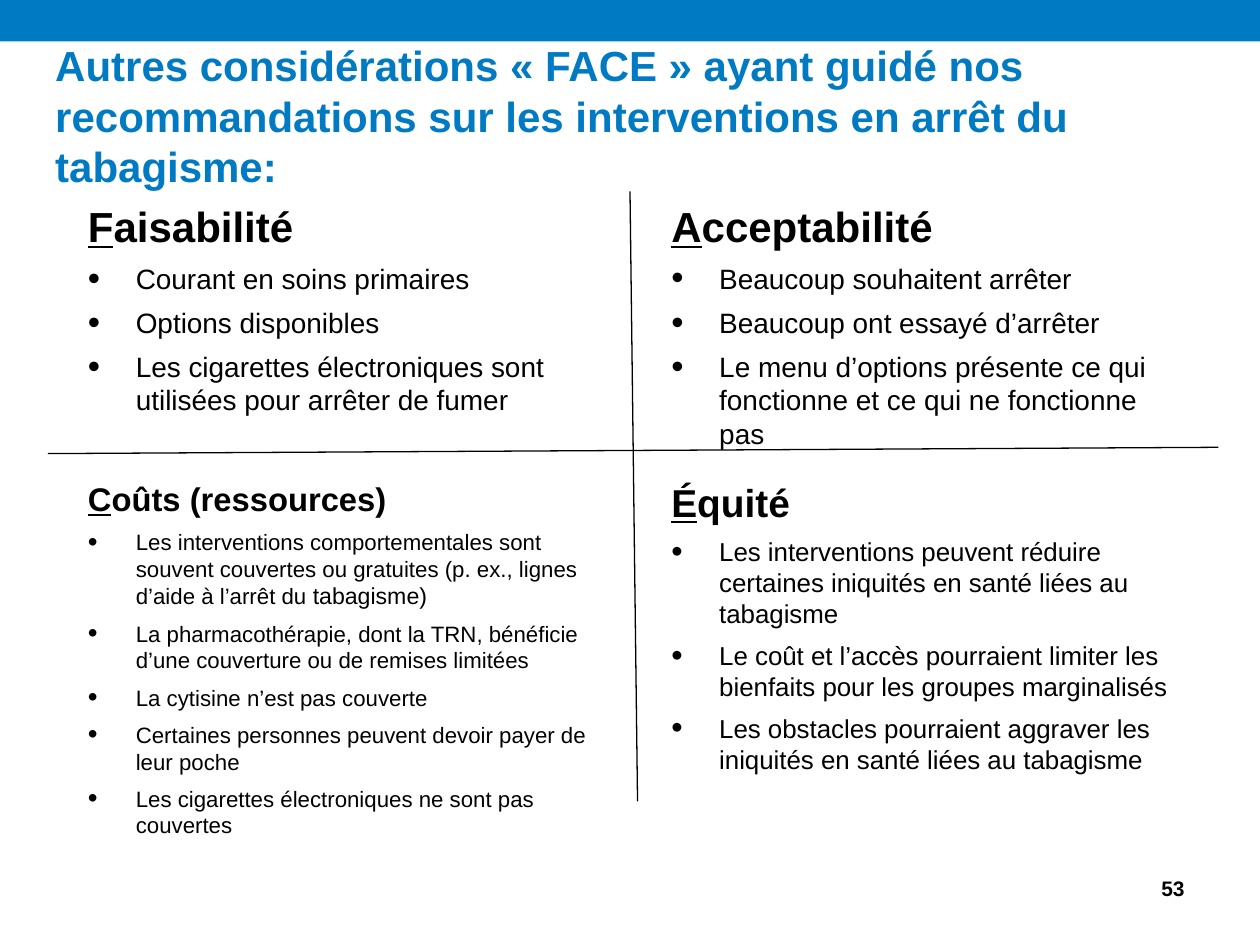
from lxml import etree
from pptx import Presentation
from pptx.dml.color import RGBColor
from pptx.enum.shapes import MSO_CONNECTOR, MSO_SHAPE
from pptx.enum.text import MSO_ANCHOR, PP_ALIGN
from pptx.oxml.ns import qn
from pptx.util import Inches, Pt

BLUE = RGBColor(0x00, 0x7B, 0xC3)
BLACK = RGBColor(0, 0, 0)
FONT = "Arial"
STRAIGHT = MSO_CONNECTOR.STRAIGHT
RECTANGLE = MSO_SHAPE.RECTANGLE
MIDDLE = MSO_ANCHOR.MIDDLE
LEFT, RIGHT = PP_ALIGN.LEFT, PP_ALIGN.RIGHT

TITLE = ("Autres considérations « FACE » ayant guidé nos recommandations "
         "sur les interventions en arrêt du tabagisme:")
PAGE_NUMBER = "53"

# Each bullet is a list of (text, size) runs or a plain string in the body size.
QUADRANTS = [
    {"heading": "Faisabilité", "box": (0.6, 1.54, 3.84, 1.89),
     "sizes": (24, 16), "bullets": [
         "Courant en soins primaires",
         "Options disponibles",
         "Les cigarettes électroniques sont utilisées pour arrêter de fumer"]},
    {"heading": "Acceptabilité", "box": (5.23, 1.54, 4.12, 2.1),
     "sizes": (24, 16), "bullets": [
         "Beaucoup souhaitent arrêter",
         "Beaucoup ont essayé d’arrêter",
         "Le menu d’options présente ce qui fonctionne et ce qui ne fonctionne pas"]},
    {"heading": "Coûts (ressources)", "box": (0.6, 3.75, 4.24, 3.03),
     "sizes": (18.7, 12.7), "bullets": [
         [("Les interventions comportementales sont souvent couvertes ou gratuites "
           "(p. ex., lignes d’aide à l’arrêt du ", 12.7), ("tabagisme)", 13.2)],
         "La pharmacothérapie, dont la TRN, bénéficie d’une couverture "
         "ou de remises limitées",
         "La cytisine n’est pas couverte",
         "Certaines personnes peuvent devoir payer de leur poche",
         "Les cigarettes électroniques ne sont pas couvertes"]},
    {"heading": "Équité", "box": (5.23, 3.75, 4.26, 2.72),
     "sizes": (22.2, 14.8), "bullets": [
         "Les interventions peuvent réduire certaines iniquités en santé liées au tabagisme",
         "Le coût et l’accès pourraient limiter les bienfaits pour les groupes marginalisés",
         "Les obstacles pourraient aggraver les iniquités en santé liées au tabagisme"]},
]
DIVIDERS = [(5, 1.52, 5.06, 6.36), (0.38, 3.6, 9.67, 3.55)]
BULLET_INDENT = Inches(0.38)


def add_frame(slide, box):
    frame = slide.shapes.add_textbox(*map(Inches, box)).text_frame
    frame.word_wrap = True
    return frame


def add_run(paragraph, text, size, color=BLACK, bold=False, underline=False):
    run = paragraph.add_run()
    run.text = text
    font = run.font
    font.name, font.size, font.bold, font.underline = FONT, Pt(size), bold, underline
    font.color.rgb = color


def add_label(slide, box, text, size, color, align):
    """Add one bold, vertically centred paragraph."""
    frame = add_frame(slide, box)
    frame.vertical_anchor = MIDDLE
    paragraph = frame.paragraphs[0]
    paragraph.alignment = align
    add_run(paragraph, text, size, color, bold=True)


def set_bullet(paragraph):
    properties = paragraph._p.get_or_add_pPr()
    properties.set("marL", str(BULLET_INDENT))
    properties.set("indent", str(-BULLET_INDENT))
    etree.SubElement(properties, qn("a:buSzPct"), val="125000")
    etree.SubElement(properties, qn("a:buFont"), typeface=FONT)
    etree.SubElement(properties, qn("a:buChar"), char="•")


def add_quadrant(slide, heading, box, sizes, bullets):
    heading_size, body_size = sizes
    frame = add_frame(slide, box)
    paragraph = frame.paragraphs[0]
    paragraph.space_after = Pt(6)
    add_run(paragraph, heading[0], heading_size, bold=True, underline=True)
    add_run(paragraph, heading[1:], heading_size, bold=True)
    for bullet in bullets:
        paragraph = frame.add_paragraph()
        paragraph.space_after = Pt(6)
        set_bullet(paragraph)
        runs = [(bullet, body_size)] if isinstance(bullet, str) else bullet
        for text, size in runs:
            add_run(paragraph, text, size)


def add_divider(slide, ends):
    line = slide.shapes.add_connector(STRAIGHT, *map(Inches, ends))
    line.line.color.rgb = BLACK
    line.line.width = Pt(0.75)
    etree.SubElement(line._element.spPr, qn("a:effectLst"))


def main():
    deck = Presentation()
    deck.slide_width, deck.slide_height = Inches(10), Inches(7.5)
    slide = deck.slides.add_slide(deck.slide_layouts[6])

    banner = slide.shapes.add_shape(RECTANGLE, 0, 0, deck.slide_width, Inches(0.33))
    banner.shadow.inherit = False
    banner.fill.solid()
    banner.fill.fore_color.rgb = BLUE
    banner.line.fill.background()

    add_label(slide, (0.34, 0.5, 9.37, 0.83), TITLE, 24, BLUE, LEFT)
    for quadrant in QUADRANTS:
        add_quadrant(slide, **quadrant)
    for ends in DIVIDERS:
        add_divider(slide, ends)
    add_label(slide, (7.78, 6.85, 1.72, 0.4), PAGE_NUMBER, 12, BLACK, RIGHT)

    deck.save("out.pptx")


if __name__ == "__main__":
    main()
